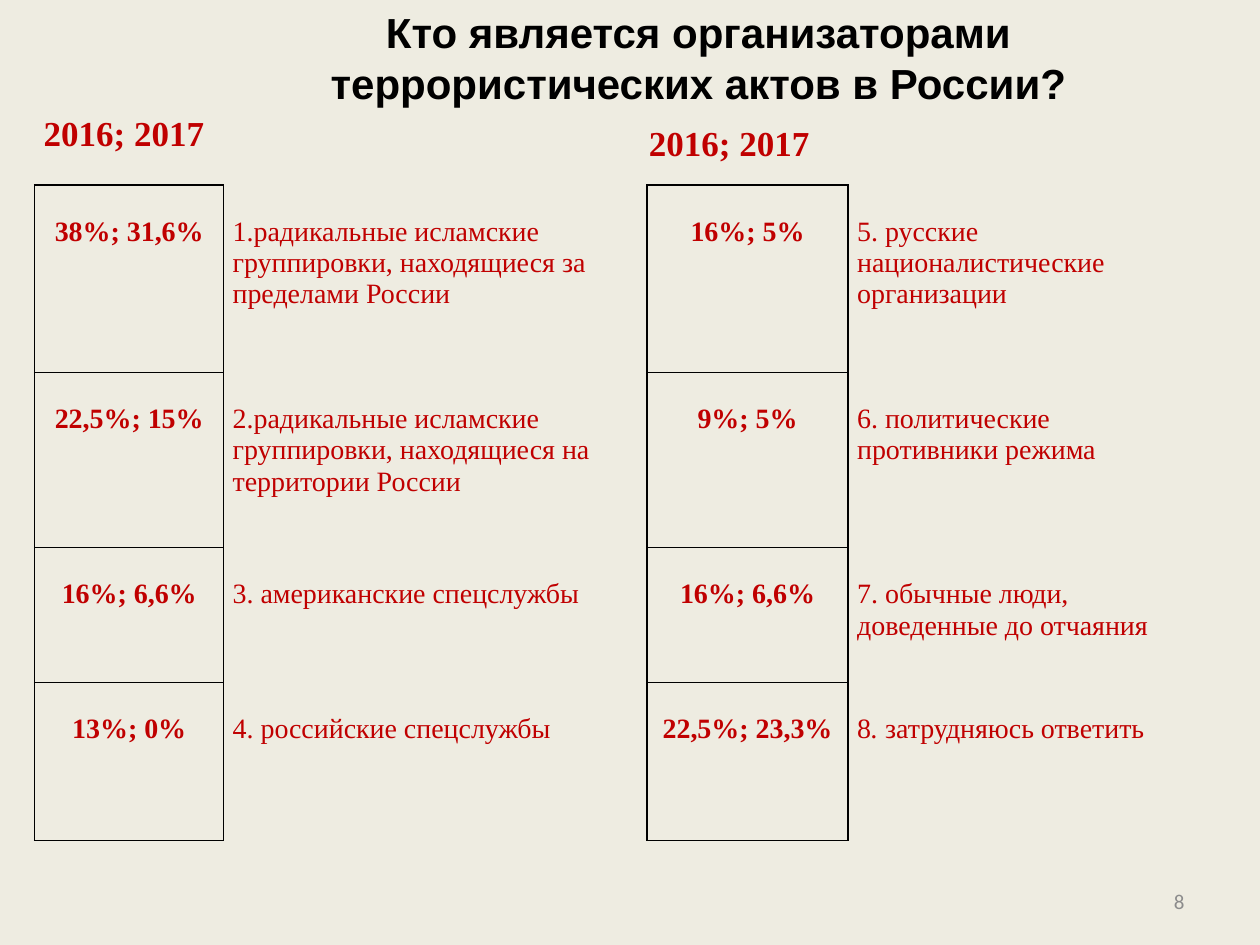
import pptx
import pptx.dml.color
import pptx.enum.text
import pptx.oxml
import pptx.oxml.ns
import pptx.util
from pptx.util import Cm

ALIGN = pptx.enum.text.PP_ALIGN
ANCHOR = pptx.enum.text.MSO_ANCHOR


def rgb(value):
    return pptx.dml.color.RGBColor.from_string(value)


class SlideBuilder:
    background = "EEECE1"
    accent = "C00000"
    serif = "Times New Roman"

    def __init__(self, prs):
        self.s = prs.slides.add_slide(prs.slide_layouts[6])
        fill = self.s.background.fill
        fill.solid()
        fill.fore_color.rgb = rgb(self.background)

    def style(self, p, size, color, name, bold, align):
        p.alignment = align
        p.font.size = pptx.util.Pt(size)
        p.font.name = name
        p.font.bold = bold
        p.font.color.rgb = rgb(color)

    def text(self, text, left, top, width, height, *style):
        sp = self.s.shapes.add_textbox(Cm(left), Cm(top), Cm(width), Cm(height))
        tf = sp.text_frame
        tf.word_wrap = True
        tf.vertical_anchor = ANCHOR.MIDDLE
        p = tf.paragraphs[0]
        p.text = text
        self.style(p, *style)

    def table(self, left, top, widths, heights):
        frame = self.s.shapes.add_table(
            len(heights), len(widths), Cm(left), Cm(top), Cm(sum(widths)), Cm(sum(heights)))
        table = frame.table
        table.first_row = False
        table.horz_banding = False
        for column, width in zip(table.columns, widths):
            column.width = Cm(width)
        for row, height in zip(table.rows, heights):
            row.height = Cm(height)
        return table

    def cell(self, cell, parts, size, bold, align, edges="", margin_top=0):
        cell.margin_left = cell.margin_right = Cm(0.18)
        cell.margin_top = Cm(margin_top)
        cell.margin_bottom = 0
        p = cell.text_frame.paragraphs[0]
        self.style(p, size, self.accent, self.serif, bold, align)
        for text, italic in parts:
            r = p.add_run()
            r.text = text
            if italic:
                r.font.italic = True
        self.borders(cell, edges)
        cell.fill.background()

    def borders(self, cell, edges):
        tcPr = cell._tc.get_or_add_tcPr()
        ns = pptx.oxml.ns.nsdecls("a")
        for side in "LRTB":
            paint = '<a:solidFill><a:srgbClr val="000000"/></a:solidFill>' if side in edges else "<a:noFill/>"
            tcPr.append(pptx.oxml.parse_xml(f'<a:ln{side} {ns} w="12700">{paint}</a:ln{side}>'))

    def years(self, left, top, height):
        table = self.table(left, top, [4.47], [height])
        self.cell(table.cell(0, 0), [("2016; 2017", False)], 20, True, ALIGN.JUSTIFY)

    def answers(self, left, top, widths, heights, rows):
        table = self.table(left, top, widths, heights)
        edges = ["LRTB", "LR", "LRTB", "L"]
        for i, row in enumerate(rows):
            for j, content in enumerate(row):
                parts = [(content, False)] if isinstance(content, str) else content
                share = j % 2 == 0
                self.cell(table.cell(i, j), parts, 16, share,
                          ALIGN.CENTER if share else ALIGN.LEFT, edges[j], 0.63)


ROWS = [
    ("38%; 31,6%", "1.радикальные исламские группировки, находящиеся за пределами России",
     "16%; 5%", "5. русские националистические организации"),
    ("22,5%; 15%", "2.радикальные исламские группировки, находящиеся на территории России",
     "9%; 5%", "6. политические противники режима"),
    ("16%; 6,6%", "3. американские спецслужбы",
     "16%; 6,6%", "7. обычные люди, доведенные до отчаяния"),
    ("13%; 0%", "4. российские спецслужбы",
     "22,5%; 23,3%", [("8", False), (". ", True), ("затрудняюсь ответить", False)]),
]


def main():
    prs = pptx.Presentation()
    prs.slide_width, prs.slide_height = Cm(25.4), Cm(19.05)
    slide = SlideBuilder(prs)
    slide.text("8", 18.2, 17.66, 5.93, 1.01, 12, "8C8C8C", "Calibri", False, ALIGN.RIGHT)
    slide.answers(0.7, 3.73, [3.81, 8.53, 4.06, 6.65], [3.78, 3.53, 2.72, 3.18], ROWS)
    slide.text("Кто является организаторами террористических актов в России?",
               4.95, 0, 18.26, 2.31, 24, "000000", "Arial", True, ALIGN.CENTER)
    slide.years(0.7, 2.33, 1.05)
    slide.years(12.9, 2.53, 1)
    prs.save("out.pptx")


if __name__ == "__main__":
    main()
